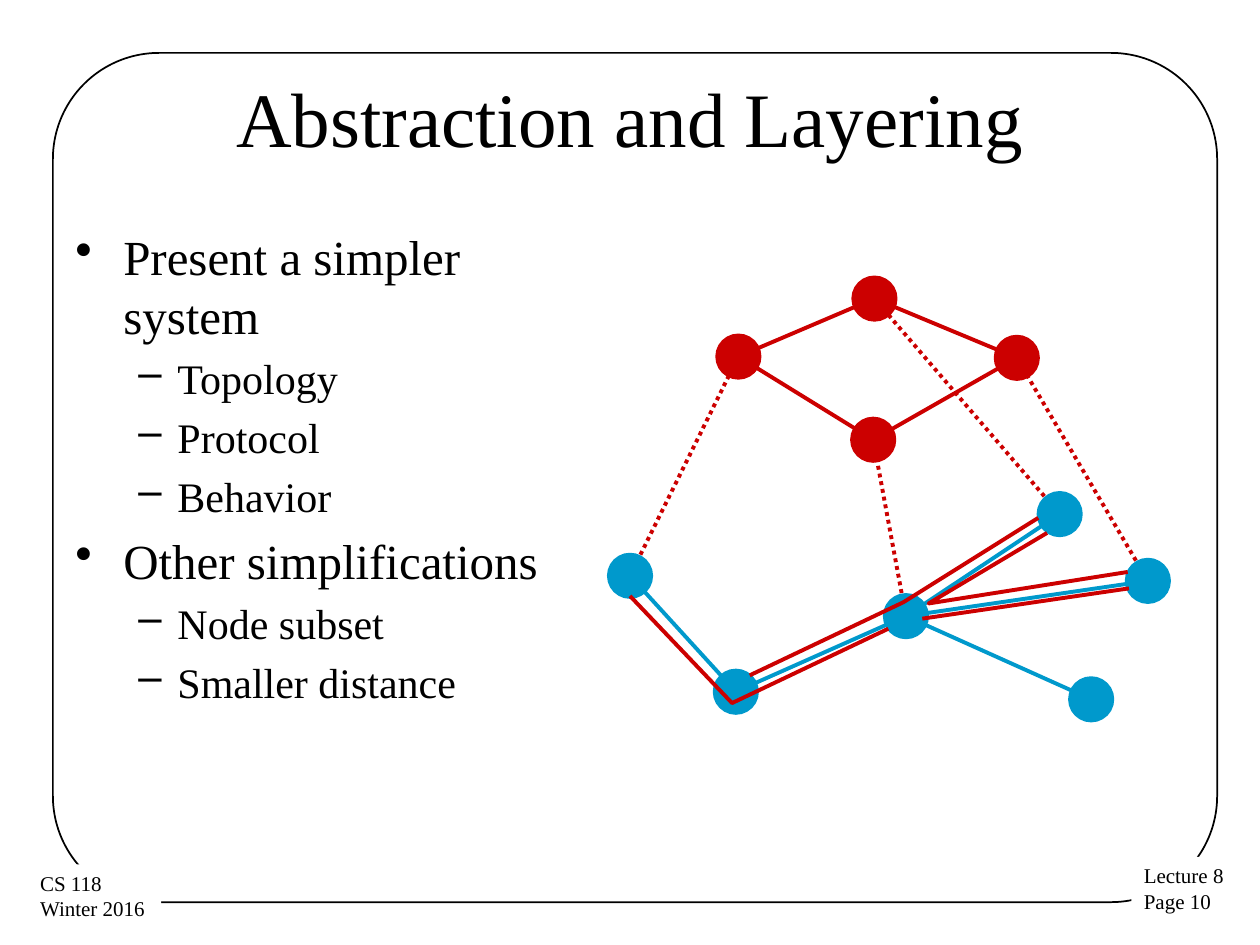
from pptx import Presentation
from pptx.dml.color import RGBColor
from pptx.enum.dml import MSO_LINE
from pptx.enum.shapes import MSO_CONNECTOR, MSO_SHAPE
from pptx.enum.text import MSO_ANCHOR, MSO_AUTO_SIZE, PP_ALIGN
from pptx.oxml.xmlchemy import OxmlElement
from pptx.util import Inches, Pt

STRAIGHT = MSO_CONNECTOR.STRAIGHT
ROUND, OVAL = MSO_SHAPE.ROUNDED_RECTANGLE, MSO_SHAPE.OVAL
DOT = MSO_LINE.ROUND_DOT
CENTER, LEFT = PP_ALIGN.CENTER, PP_ALIGN.LEFT
TOP, MIDDLE = MSO_ANCHOR.TOP, MSO_ANCHOR.MIDDLE
FIT, FIXED = MSO_AUTO_SIZE.SHAPE_TO_FIT_TEXT, MSO_AUTO_SIZE.NONE

COLORS = {"ink": "000000", "paper": "FFFFFF", "red": "CC0000", "blue": "0099CC"}
FONT = "Times New Roman"
COLS, ROWS = 100, 75
NODE = 3.35  # node diameter in columns
# Per level: bullet, size, left margin and hanging indent in inches
LEVELS = [("•", 28, 0.38, 0.38), ("–", 24, 0.81, 0.31)]


def apply(item, values):
    for name, value in values.items():
        setattr(item, name, value)


class Board:
    """Draws on one slide; lengths are grid columns and rows."""

    def __init__(self, deck):
        self.slide = deck.slides.add_slide(deck.slide_layouts[6])
        self.shapes = self.slide.shapes
        self.col = deck.slide_width / COLS
        self.row = deck.slide_height / ROWS

    def spot(self, x, y):
        return round(x * self.col), round(y * self.row)

    def color(self, name):
        return RGBColor.from_string(COLORS[name])

    def stroke(self, item, color, width):
        item.line.color.rgb = self.color(color)
        item.line.width = Pt(width)

    def shape(self, kind, box, line, width, fill=None):
        item = self.shapes.add_shape(kind, *self.spot(*box[:2]), *self.spot(*box[2:]))
        item.shadow.inherit = False
        self.stroke(item, line, width)
        if fill:
            item.fill.solid()
            item.fill.fore_color.rgb = self.color(fill)
        else:
            item.fill.background()
        return item

    def node(self, center, color):
        x, y = center
        self.shape(OVAL, (x - NODE / 2, y - NODE / 2, NODE, NODE), color, 2.25, color)

    def link(self, start, end, color, dash=None):
        item = self.shapes.add_connector(STRAIGHT, *self.spot(*start), *self.spot(*end))
        self.stroke(item, color, 2.25)
        if dash:
            item.line.dash_style = dash
        item._element.spPr.append(OxmlElement("a:effectLst"))

    def trail(self, points, color):
        start, *rest = [self.spot(*point) for point in points]
        form = self.shapes.build_freeform(*start)
        form.add_line_segments(rest, close=False)
        item = form.convert_to_shape()
        item.shadow.inherit = False
        item.fill.background()
        self.stroke(item, color, 2.25)

    def text(self, box, lines, size, align=LEFT, anchor=TOP, wrap=True, fill=None):
        item = self.shapes.add_textbox(*self.spot(*box[:2]), *self.spot(*box[2:]))
        if fill:
            item.fill.solid()
            item.fill.fore_color.rgb = self.color(fill)
        frame = item.text_frame
        apply(frame, {"word_wrap": wrap, "vertical_anchor": anchor,
                      "auto_size": FIXED if wrap else FIT})
        frame.text = "\n".join(lines)
        for para in frame.paragraphs:
            para.alignment = align
            for run in para.runs:
                apply(run.font, {"name": FONT, "size": Pt(size)})
                run.font.color.rgb = self.color("ink")
        return frame

    def outline(self, box, entries):
        frame = self.text(box, [words for _, words in entries], LEVELS[0][1])
        for para, (level, _) in zip(frame.paragraphs, entries):
            mark, size, margin, hang = LEVELS[level]
            para.level = level
            para.runs[0].font.size = Pt(size)
            props = para._p.get_or_add_pPr()
            props.set("marL", str(Inches(margin)))
            props.set("indent", str(-Inches(hang)))
            # Space before is a share of the text size
            before, share = OxmlElement("a:spcBef"), OxmlElement("a:spcPct")
            share.set("val", "20000")
            before.append(share)
            bullet = OxmlElement("a:buChar")
            bullet.set("char", mark)
            props.extend([before, bullet])


def main():
    deck = Presentation()
    deck.slide_width, deck.slide_height = Inches(10), Inches(7.5)
    board = Board(deck)

    # Frame and corner labels
    frame = board.shape(ROUND, (4.2, 4.2, 92.4, 67.4), "ink", 1)
    frame.adjustments[0] = 0.125
    for box, lines in [((89.8, 68, 8.4, 5.1), ["Lecture 8", "Page 10"]),
                       ((2.2, 68.6, 10.6, 5.1), ["CS 118", "Winter 2016"])]:
        board.text(box, lines, 12, wrap=False, fill="paper")

    # Title and outline
    board.text((5, 3, 90, 12.5), ["Abstraction and Layering"], 44, CENTER, MIDDLE)
    board.outline((5, 17.5, 44.2, 49.5), [
        (0, "Present a simpler system"),
        (1, "Topology"), (1, "Protocol"), (1, "Behavior"),
        (0, "Other simplifications"),
        (1, "Node subset"), (1, "Smaller distance")])

    # Nodes of the real (blue) and the abstract (red) network
    real = {"west": (50, 45.7), "south": (58.4, 54.9), "hub": (71.9, 48.9),
            "north": (84.1, 40.8), "leaf": (86.6, 55.5), "east": (91.1, 46.1)}
    ideal = {"west": (58.6, 28.3), "north": (69.4, 23.7),
             "east": (80.7, 28.4), "hub": (69.3, 34.9)}

    # Dotted mapping between the two layers
    for name, point in ideal.items():
        board.link(real[name], point, "red", DOT)

    # Each network: links below, nodes on top
    nets = [(real, "blue", ["west south", "south hub", "hub north",
                            "hub leaf", "hub east"]),
            (ideal, "red", ["west north", "north east", "west hub", "hub east"])]
    for nodes, color, pairs in nets:
        for pair in pairs:
            start, end = pair.split()
            board.link(nodes[start], nodes[end], color)
        for center in nodes.values():
            board.node(center, color)

    # Abstract links traced along the real paths
    for points in [[(83.1, 42.3), (73.7, 47.9), (89.5, 45.4)],
                   [(50, 47.3), (58.1, 55.8), (70.5, 49.9)],
                   [(59.5, 53.6), (71.7, 47.8), (82.4, 41.1)]]:
        board.trail(points, "red")
    board.link((73.2, 49.1), (89.6, 46.7), "red")

    deck.save("out.pptx")


if __name__ == "__main__":
    main()
